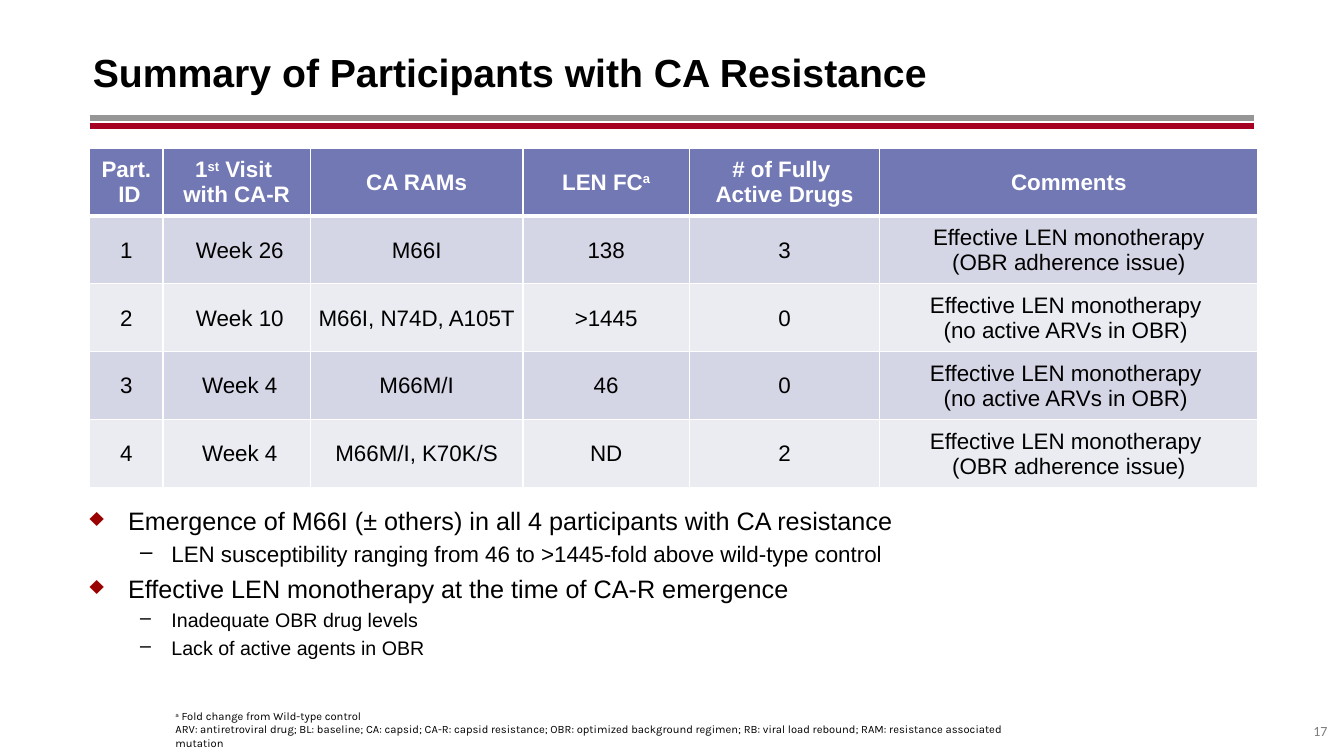
from lxml.etree import SubElement
from pptx import Presentation
from pptx.dml.color import RGBColor
from pptx.enum.shapes import MSO_CONNECTOR
from pptx.enum.text import MSO_ANCHOR, MSO_AUTO_SIZE, PP_ALIGN
from pptx.oxml.ns import qn
from pptx.util import Cm, Pt


def rgb(value):
    return RGBColor.from_string(value)


def write(frame, text, size=16, font="Arial", color="000000", bold=False, align=None):
    """Add one paragraph; ^x^ is superscript and \\v is a line break."""
    para = frame.paragraphs[0]
    if para.runs:
        para = frame.add_paragraph()
    para.alignment = align
    for line_index, line in enumerate(text.split("\v")):
        if line_index:
            para.add_line_break()
        for part_index, part in enumerate(line.split("^")):
            if not part:
                continue
            span = para.add_run()
            span.text = part
            span.font.size = Pt(size)
            span.font.name = font
            span.font.bold = bold
            span.font.color.rgb = rgb(color)
            if part_index % 2:
                span._r.get_or_add_rPr().set("baseline", "30000")
    return para


deck = Presentation()
deck.slide_width, deck.slide_height = Cm(33.87), Cm(19.05)
page = deck.slides.add_slide(deck.slide_layouts[6])

# Double rule under the title
for top, color in ((2.97, "969696"), (3.18, "A50021")):
    rule = page.shapes.add_connector(MSO_CONNECTOR.STRAIGHT, Cm(2.26), Cm(top), Cm(31.6), Cm(top))
    rule.line.color.rgb = rgb(color)
    rule.line.width = Pt(4.25)
    SubElement(rule._element.spPr, qn("a:effectLst"))

# Text boxes
frames = {}
for name, left, top, width, height in (
    ("number", 33.02, 18.34, 0.76, 0.33),
    ("footnote", 4.17, 17.75, 22.45, 0.94),
    ("title", 2.34, 0.71, 29.34, 2.18),
    ("findings", 2.26, 12.6, 29.34, 4.8),
):
    box = page.shapes.add_textbox(Cm(left), Cm(top), Cm(width), Cm(height))
    frames[name] = box.text_frame
    box.text_frame.word_wrap = True

# Slide number
number = frames["number"]
number.margin_left = number.margin_right = number.margin_top = number.margin_bottom = 0
number.auto_size = MSO_AUTO_SIZE.SHAPE_TO_FIT_TEXT
para = write(number, "17", size=10, font="Calibri", color="7E7E7E")
para.line_spacing = Pt(8.6)
para._p.get_or_add_pPr().set("marL", str(Cm(0.08)))

# Footnote
frames["footnote"].auto_size = MSO_AUTO_SIZE.SHAPE_TO_FIT_TEXT
for note in (
    "^a^ Fold change from Wild-type control",
    "ARV: antiretroviral drug; BL: baseline; CA: capsid; CA-R: capsid resistance; "
    "OBR: optimized background regimen; RB: viral load rebound; "
    "RAM: resistance associated mutation",
):
    write(frames["footnote"], note, size=8, font="Karla")

# Title
frames["title"].margin_left = 0
frames["title"].vertical_anchor = MSO_ANCHOR.MIDDLE
write(frames["title"], "Summary of Participants with CA Resistance", size=28, bold=True)

# Participant table
ROWS = (
    ("Part.\v ID", "1^st^ Visit \nwith CA-R", "CA RAMs", "LEN FC^a^",
     "# of Fully \nActive Drugs", "Comments"),
    ("1", " Week 26", "M66I", "138", "3",
     "Effective LEN monotherapy\v(OBR adherence issue)"),
    ("2", " Week 10", "M66I, N74D, A105T", ">1445", "0",
     "Effective LEN monotherapy \v(no active ARVs in OBR) "),
    ("3", " Week 4", "M66M/I", "46", "0",
     "Effective LEN monotherapy \n(no active ARVs in OBR) "),
    ("4", " Week 4", "M66M/I, K70K/S", "ND", "2",
     "Effective LEN monotherapy \n(OBR adherence issue)"),
)
COLUMN_WIDTHS = (1.85, 3.71, 5.36, 4.19, 4.8, 9.53)
ROW_HEIGHT = 1.71

table = page.shapes.add_table(
    len(ROWS), len(COLUMN_WIDTHS), Cm(2.26), Cm(3.73),
    Cm(sum(COLUMN_WIDTHS)), Cm(ROW_HEIGHT * len(ROWS)),
).table
table.horz_banding = False
for column, width in zip(table.columns, COLUMN_WIDTHS):
    column.width = Cm(width)

for row_index, row in enumerate(ROWS):
    table.rows[row_index].height = Cm(ROW_HEIGHT)
    header = row_index == 0
    fill = "7278B4" if header else ("EBECF2", "D5D6E5")[row_index % 2]
    for column_index, text in enumerate(row):
        cell = table.cell(row_index, column_index)
        cell.vertical_anchor = MSO_ANCHOR.MIDDLE
        cell.margin_left = cell.margin_right = cell.margin_top = Cm(0.03)
        cell.margin_bottom = 0
        # White borders, thicker between header and body
        for side in ("lnL", "lnR", "lnT", "lnB"):
            thick = (side == "lnB" and header) or (side == "lnT" and row_index == 1)
            border = SubElement(cell._tc.get_or_add_tcPr(), qn(f"a:{side}"),
                                w=str(Pt(3 if thick else 1)))
            SubElement(SubElement(border, qn("a:solidFill")), qn("a:srgbClr"), val="FFFFFF")
        cell.fill.solid()
        cell.fill.fore_color.rgb = rgb(fill)
        for line in text.split("\n"):
            write(cell.text_frame, line, bold=header, align=PP_ALIGN.CENTER,
                  color="FFFFFF" if header else "000000")

# Findings: level, size, text
frames["findings"].margin_left = 0
BULLETS = (("♦", 0.97, -0.97, "990000"), ("–", 2.06, -0.79, "000000"))
for index, (level, size, text) in enumerate((
    (0, 18, "Emergence of M66I (± others) in all 4 participants with CA resistance"),
    (1, 16, "LEN susceptibility ranging from 46 to >1445-fold above wild-type control"),
    (0, 18, "Effective LEN monotherapy at the time of CA-R emergence"),
    (1, 14, "Inadequate OBR drug levels"),
    (1, 14, "Lack of active agents in OBR"),
)):
    symbol, margin, indent, color = BULLETS[level]
    para = write(frames["findings"], text, size=size)
    para.level = level
    properties = para._p.get_or_add_pPr()
    properties.set("marL", str(Cm(margin)))
    properties.set("indent", str(Cm(indent)))
    SubElement(SubElement(properties, qn("a:buClr")), qn("a:srgbClr"), val=color)
    SubElement(properties, qn("a:buChar"), char=symbol)
    if index:
        para.space_before = Pt(round(size * 0.23, 1))

deck.save("out.pptx")
